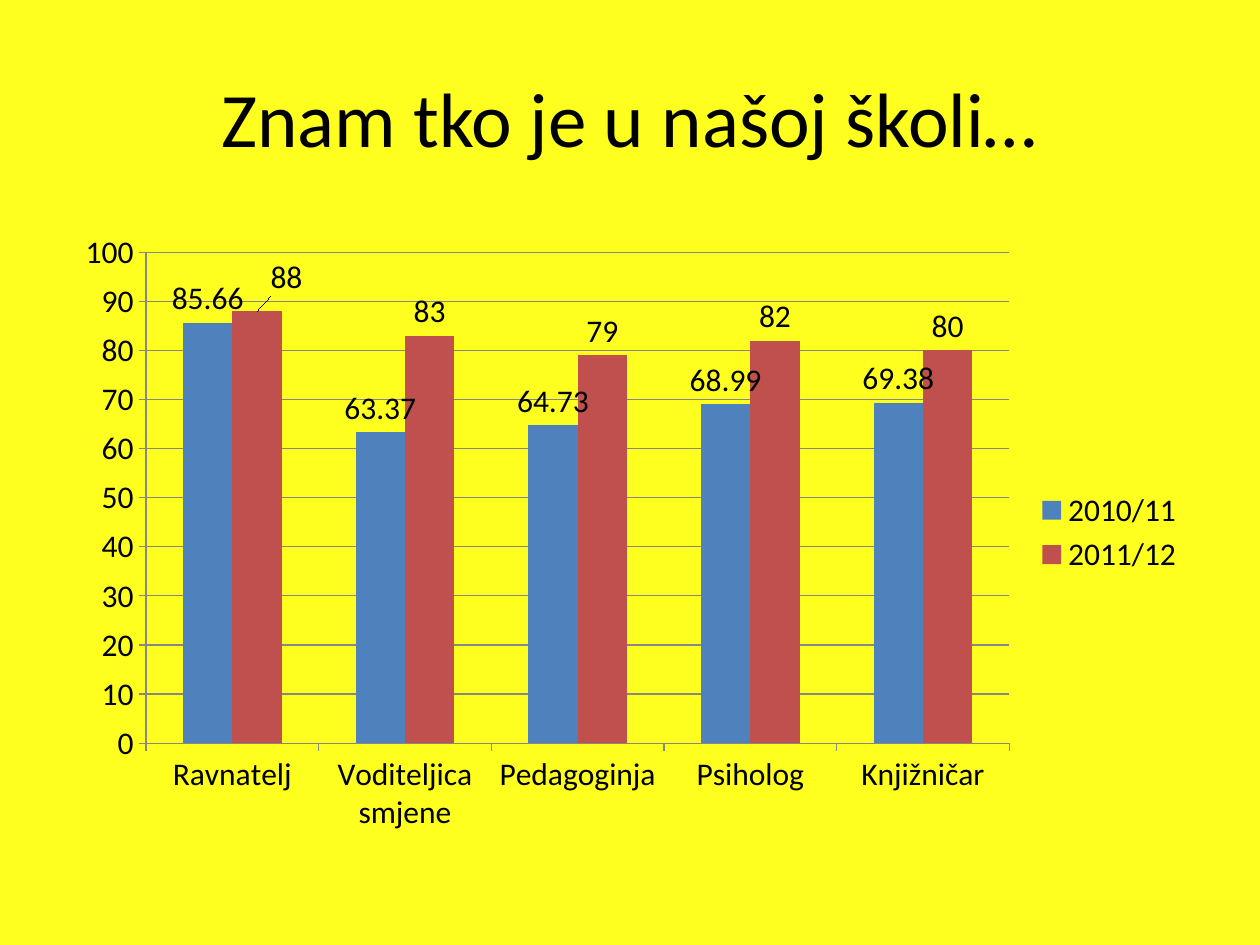
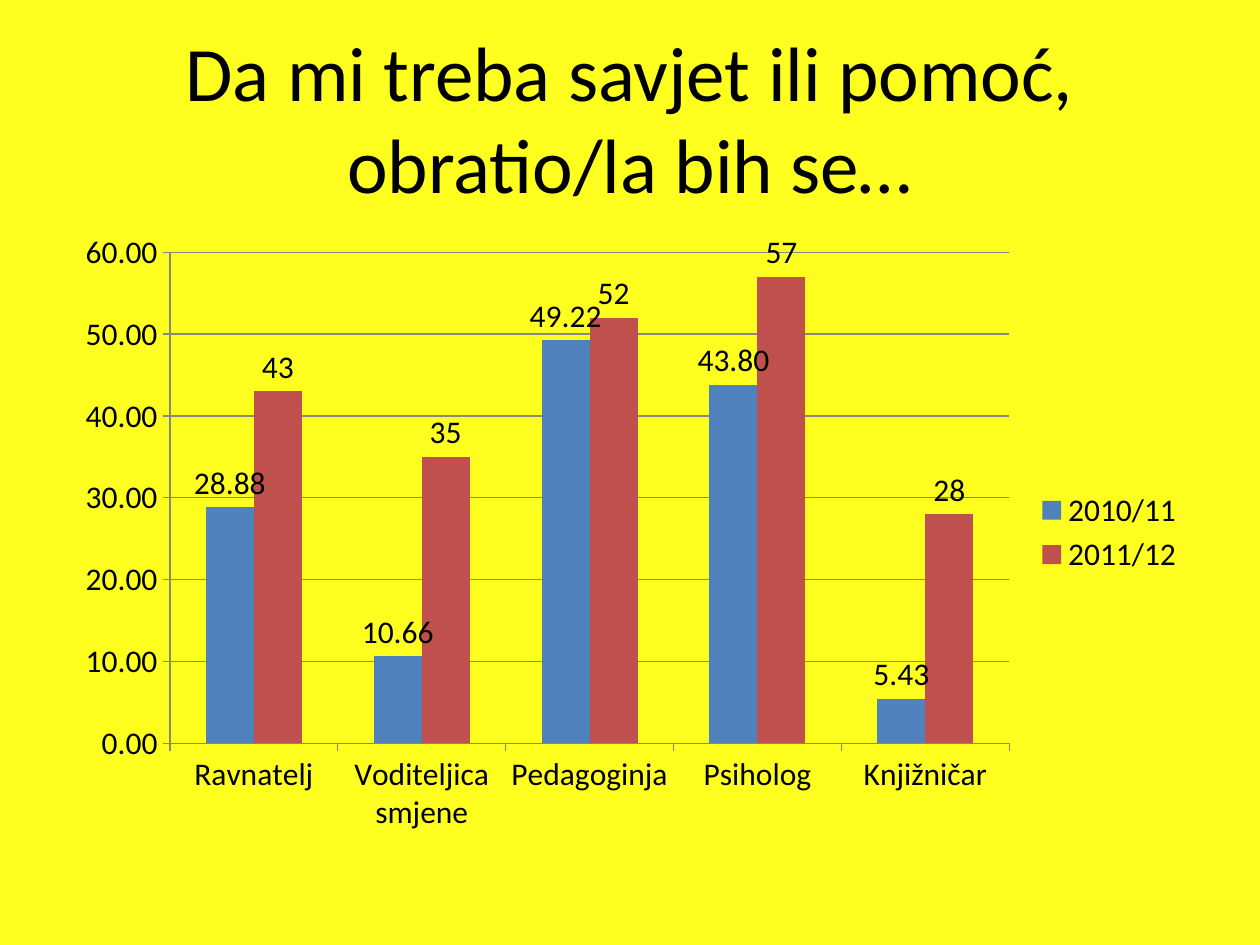
"""Build two survey slides comparing school staff results over two school years."""
from dataclasses import dataclass

from lxml import etree
from pptx import Presentation
from pptx.chart.data import CategoryChartData
from pptx.dml.color import RGBColor
from pptx.enum.chart import XL_CHART_TYPE, XL_LABEL_POSITION, XL_LEGEND_POSITION, XL_TICK_MARK
from pptx.enum.text import MSO_ANCHOR, PP_ALIGN
from pptx.oxml.ns import qn
from pptx.util import Cm, Pt

COLUMNS = XL_CHART_TYPE.COLUMN_CLUSTERED
LABEL_ABOVE = XL_LABEL_POSITION.OUTSIDE_END
LEGEND_RIGHT = XL_LEGEND_POSITION.RIGHT
TICK_OUTSIDE = XL_TICK_MARK.OUTSIDE
MIDDLE = MSO_ANCHOR.MIDDLE
CENTER = PP_ALIGN.CENTER

STAFF = ["Ravnatelj", "Voditeljica smjene", "Pedagoginja", "Psiholog", "Knjižničar"]
YEARS = ["2010/11", "2011/12"]
SURVEYS = [
    {
        "title": "Znam tko je u našoj školi…",
        "values": [[85.66, 63.37, 64.73, 68.99, 69.38], [88, 83, 79, 82, 80]],
        "formats": ["General", "General"],
        "maximum": 100,
        "moved_labels": [(1, 0, 0.026, -0.016)],
    },
    {
        "title": "Da mi treba savjet ili pomoć, obratio/la bih se…",
        "values": [[28.88, 10.66, 49.22, 43.8, 5.43], [43, 35, 52, 57, 28]],
        "formats": ["0.00", "General"],
        "maximum": 60,
        "moved_labels": [],
    },
]


@dataclass(frozen=True)
class Theme:
    """Hold the shared colours, font and type sizes."""
    background: RGBColor = RGBColor(0xFF, 0xFF, 0x1F)
    text: RGBColor = RGBColor(0, 0, 0)
    line: RGBColor = RGBColor(0x87, 0x87, 0x87)
    series: tuple = (RGBColor(0x4F, 0x81, 0xBD), RGBColor(0xC0, 0x50, 0x4D))
    font: str = "Calibri"
    title_size: Pt = Pt(44)
    chart_size: Pt = Pt(18)


THEME = Theme()
MARGIN, CONTENT_WIDTH = Cm(1.27), Cm(22.86)
TITLE_BOX = (MARGIN, Cm(0.76), CONTENT_WIDTH, Cm(3.18))
CHART_BOX = (MARGIN, Cm(4.45), CONTENT_WIDTH, Cm(12.57))


def style_font(font, size):
    """Apply the theme's typeface and text colour."""
    font.name = THEME.font
    font.size = size
    font.color.rgb = THEME.text


def add_title(slide, title):
    """Add the centred slide title."""
    frame = slide.shapes.add_textbox(*TITLE_BOX).text_frame
    frame.word_wrap = True
    frame.vertical_anchor = MIDDLE
    paragraph = frame.paragraphs[0]
    paragraph.text = title
    paragraph.alignment = CENTER
    style_font(paragraph.font, THEME.title_size)


def move_label(series, point_index, shift_x, shift_y):
    """Shift one data label by fractions of the chart size."""
    series.points[point_index].data_label.position = LABEL_ABOVE
    label = series.data_labels._element.find(qn("c:dLbl"))
    layout = etree.Element(qn("c:layout"))
    manual = etree.SubElement(layout, qn("c:manualLayout"))
    for axis, shift in (("x", shift_x), ("y", shift_y)):
        etree.SubElement(manual, qn(f"c:{axis}")).set("val", str(shift))
    label.find(qn("c:idx")).addnext(layout)


def style_axes(chart, survey):
    """Set the scale, tick marks and grid lines."""
    value_axis = chart.value_axis
    value_axis.minimum_scale = 0
    value_axis.maximum_scale = survey["maximum"]
    value_axis.major_unit = 10
    value_axis.has_major_gridlines = True
    value_axis.major_gridlines.format.line.color.rgb = THEME.line
    value_axis.tick_labels.number_format = survey["formats"][0]
    value_axis.tick_labels.number_format_is_linked = False
    for axis in (chart.category_axis, value_axis):
        axis.major_tick_mark = TICK_OUTSIDE
        axis.format.line.color.rgb = THEME.line


def add_survey_chart(slide, survey):
    """Add the clustered columns with value labels and a legend."""
    data = CategoryChartData()
    data.categories = STAFF
    for year, values, number_format in zip(YEARS, survey["values"], survey["formats"]):
        data.add_series(year, values, number_format)
    chart = slide.shapes.add_chart(COLUMNS, *CHART_BOX, data).chart
    style_font(chart.font, THEME.chart_size)
    chart.has_title = False
    chart.has_legend = True
    chart.legend.position = LEGEND_RIGHT
    chart.legend.include_in_layout = False
    style_axes(chart, survey)

    plot = chart.plots[0]
    plot.gap_width = 150
    plot.overlap = 0
    plot.vary_by_categories = False
    for series, color, number_format in zip(plot.series, THEME.series, survey["formats"]):
        series.format.fill.solid()
        series.format.fill.fore_color.rgb = color
        labels = series.data_labels
        labels.show_value = True
        labels.position = LABEL_ABOVE
        labels.number_format = number_format
        labels.number_format_is_linked = False
    for series_index, *placement in survey["moved_labels"]:
        move_label(plot.series[series_index], *placement)


def main():
    """Create and save the presentation."""
    presentation = Presentation()
    presentation.slide_width, presentation.slide_height = Cm(25.4), Cm(19.05)
    for survey in SURVEYS:
        slide = presentation.slides.add_slide(presentation.slide_layouts[6])
        slide.background.fill.solid()
        slide.background.fill.fore_color.rgb = THEME.background
        add_title(slide, survey["title"])
        add_survey_chart(slide, survey)
    presentation.save("out.pptx")


if __name__ == "__main__":
    main()
